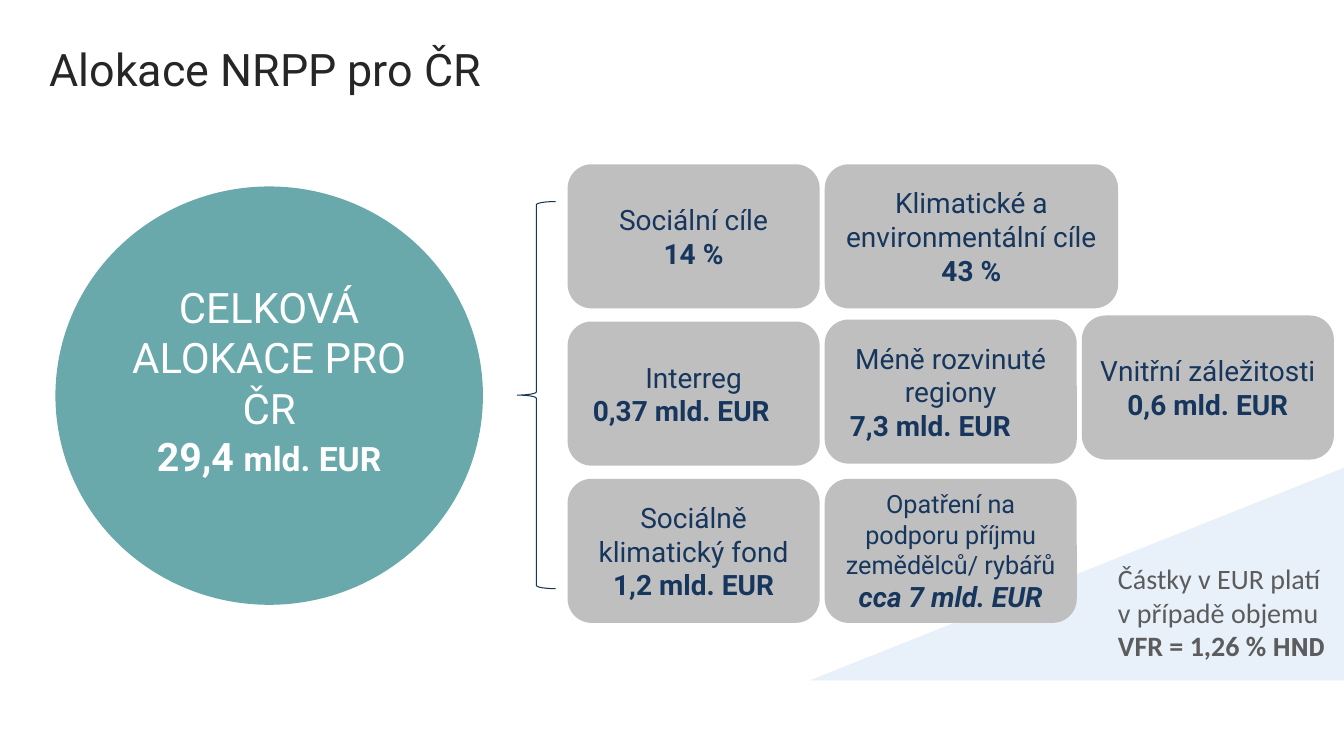
from pptx import Presentation
from pptx.dml.color import RGBColor
from pptx.enum.shapes import MSO_SHAPE as Shape
from pptx.enum.text import MSO_ANCHOR as Anchor, MSO_AUTO_SIZE as AutoSize, PP_ALIGN as Align
from pptx.util import Pt

PX = 9144  # EMU per px, 100 px to the inch
COLOURS = {
    "title": "262626", "total": "69A8AB", "white": "FFFFFF", "card": "BFBFBF",
    "navy": "17365D", "brace": "15355D", "corner": "E8F0F9", "note": "5C5C5C",
}


def rgb(name):
    return RGBColor.from_string(COLOURS[name])


class SlideBuilder:
    font = "Roboto"

    def __init__(self, slide):
        self.slide = slide

    def add_text(self, frame, paragraphs, colour, align=Align.CENTER, anchor=Anchor.MIDDLE):
        """Each paragraph is a list of (text, font values) runs."""
        frame.word_wrap = True
        frame.vertical_anchor = anchor
        for index, runs in enumerate(paragraphs):
            paragraph = frame.paragraphs[0] if index == 0 else frame.add_paragraph()
            paragraph.alignment = align
            for text, values in runs:
                run = paragraph.add_run()
                run.text = text
                run.font.color.rgb = rgb(colour)
                for key, value in {"name": self.font, **values}.items():
                    setattr(run.font, key, value)

    def title(self, box, text):
        holder = self.slide.shapes.title
        for key, length in zip(("left", "top", "width", "height"), box):
            setattr(holder, key, length * PX)
        frame = holder.text_frame
        frame.auto_size = AutoSize.NONE
        self.add_text(frame, [[(text, {"size": Pt(32)})]], "title", Align.LEFT)
        paragraph = frame.paragraphs[0]
        paragraph.line_spacing = 1.1
        paragraph._p.get_or_add_pPr().set("marL", str(39 * PX))

    def shape(self, kind, box, fill=None, line=None):
        shape = self.slide.shapes.add_shape(kind, *(length * PX for length in box))
        shape.shadow.inherit = False
        if fill:
            shape.fill.solid()
            shape.fill.fore_color.rgb = rgb(fill)
        else:
            shape.fill.background()
        if line:
            shape.line.color.rgb = rgb(line)
            shape.line.width = Pt(0.75)
        else:
            shape.line.fill.background()
        return shape

    def card(self, box, label, amount, label_size=20, italic=None):
        card = self.shape(Shape.ROUNDED_RECTANGLE, box, "card")
        self.add_text(card.text_frame, [
            [(label, {"size": Pt(label_size)})],
            [(amount, {"size": Pt(20), "bold": True, "italic": italic})],
        ], "navy")

    def note(self, box, runs):
        note = self.slide.shapes.add_textbox(*(length * PX for length in box))
        self.add_text(note.text_frame, [runs], "note", Align.LEFT, Anchor.TOP)


def main():
    deck = Presentation()
    deck.slide_width, deck.slide_height = 1333 * PX, 750 * PX
    builder = SlideBuilder(deck.slides.add_slide(deck.slide_layouts[5]))
    builder.title((0, 0, 1297, 130), "Alokace NRPP pro ČR")

    # Total allocation, with its text raised above the middle
    total = builder.shape(Shape.FLOWCHART_CONNECTOR, (55, 185, 424, 415), "total")
    total.text_frame.margin_bottom = 35 * PX
    builder.add_text(total.text_frame, [
        [("CELKOVÁ ALOKACE PRO ČR", {"size": Pt(30)})],
        [("29,4 ", {"size": Pt(28), "bold": True}),
         ("mld. EUR", {"size": Pt(24), "bold": True})],
    ], "white")
    builder.shape(Shape.LEFT_BRACE, (513, 200, 38, 384), line="brace")

    # Corner triangle, behind the cards
    corner = builder.shape(Shape.ISOSCELES_TRIANGLE, (803, 464, 530, 211), "corner")
    corner.adjustments[0] = 1

    # Parts of the allocation: column, top, width, label, amount, extra values
    card_left, column_step, card_width, card_height = 563, 255, 250, 143
    parts = [
        (0, 163, card_width, "Sociální cíle", "14 %", {}),
        (1, 163, 291, "Klimatické a environmentální cíle", "43 %", {}),
        (0, 319, card_width, "Interreg", "0,37 mld. EUR\t", {}),
        (1, 317, card_width, "Méně rozvinuté regiony", "7,3 mld. EUR \t", {}),
        (2, 313, card_width, "Vnitřní záležitosti", "0,6 mld. EUR", {}),
        (0, 475, card_width, "Sociálně klimatický fond", "1,2 mld. EUR", {}),
        (1, 475, card_width, "Opatření na podporu příjmu zemědělců/ rybářů",
         "cca 7 mld. EUR", {"label_size": 18, "italic": True}),
    ]
    for column, top, width, label, amount, extra in parts:
        left = card_left + column * column_step
        builder.card((left, top, width, card_height), label, amount, **extra)

    # Condition for the amounts
    calibri = {"name": "Calibri", "size": Pt(20)}
    builder.note((1099, 552, 234, 111), [
        ("Částky v EUR platí v případě objemu ", calibri),
        ("VFR = 1,26 % ", {**calibri, "bold": True}),
        ("HND", {"size": Pt(18), "bold": True}),
    ])

    deck.save("out.pptx")


if __name__ == "__main__":
    main()
